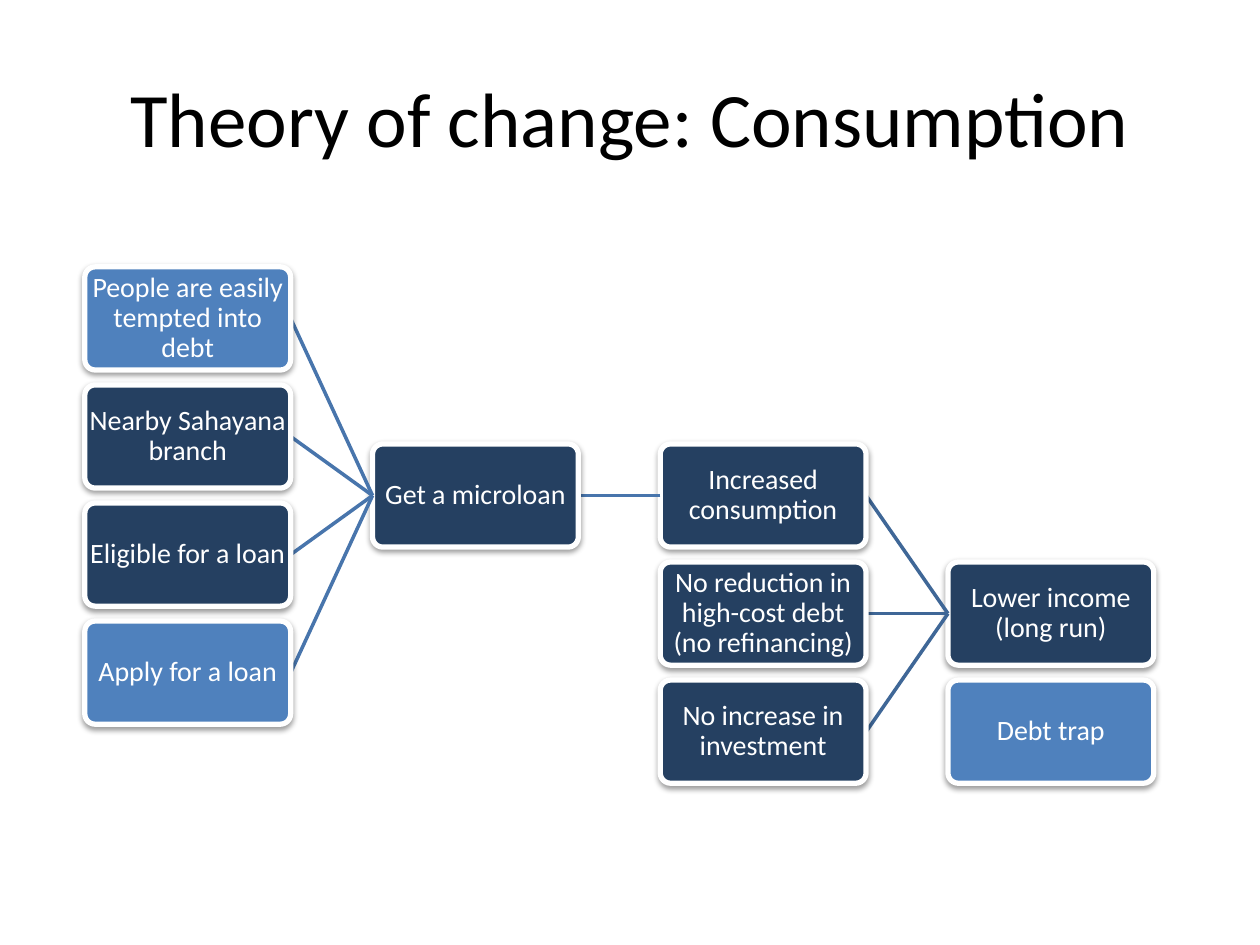
from dataclasses import dataclass

from lxml import etree
from pptx import Presentation
from pptx.dml.color import RGBColor
from pptx.enum.shapes import MSO_CONNECTOR, MSO_SHAPE
from pptx.enum.text import MSO_ANCHOR, PP_ALIGN
from pptx.oxml import parse_xml
from pptx.oxml.ns import nsdecls, qn
from pptx.util import Cm, Pt

STRAIGHT = MSO_CONNECTOR.STRAIGHT
ROUNDED = MSO_SHAPE.ROUNDED_RECTANGLE
MIDDLE = MSO_ANCHOR.MIDDLE
CENTER = PP_ALIGN.CENTER
LEFT_SITE, RIGHT_SITE = 1, 3


@dataclass(frozen=True)
class Theme:
    font: str = "Calibri"
    title_size: int = 44
    box_size: int = 16
    black: str = "000000"
    white: str = "FFFFFF"
    dark: str = "254061"
    light: str = "4F81BD"
    near_link: str = "3F6797"
    far_link: str = "4875AC"


@dataclass(frozen=True)
class Step:
    text: str
    column: int
    row: float
    color: str
    link_color: str = ""
    causes: tuple = ()


THEME = Theme()
GRID_LEFT, GRID_TOP = 1.71, 5.38
COLUMN_PITCH, ROW_PITCH = 5.8, 2.38
BOX_WIDTH, BOX_HEIGHT = 4.15, 2.08

MICROLOAN = Step("Get a microloan", 1, 1.5, THEME.dark, THEME.far_link, (
    Step("People are easily tempted into debt", 0, 0, THEME.light),
    Step("Nearby Sahayana branch", 0, 1, THEME.dark),
    Step("Eligible for a loan", 0, 2, THEME.dark),
    Step("Apply for a loan", 0, 3, THEME.light),
))
CONSUMPTION = Step("Increased consumption", 2, 1.5, THEME.dark, THEME.far_link, (MICROLOAN,))
LOWER_INCOME = Step("Lower income (long run)", 3, 2.5, THEME.dark, THEME.near_link, (
    CONSUMPTION,
    Step("No reduction in high-cost debt (no refinancing)", 2, 2.5, THEME.dark),
    Step("No increase in investment", 2, 3.5, THEME.dark),
))
DEBT_TRAP = Step("Debt trap", 3, 3.5, THEME.light)


def format_text(frame, text, size, color):
    frame.text = text
    frame.word_wrap = True
    frame.vertical_anchor = MIDDLE
    para = frame.paragraphs[0]
    para.alignment = CENTER
    font = para.runs[0].font
    font.name = THEME.font
    font.size = Pt(size)
    font.color.rgb = RGBColor.from_string(color)


def add_title(slide, text):
    title = slide.shapes.title
    title.left, title.top = Cm(1.27), Cm(0.76)
    title.width, title.height = Cm(22.86), Cm(3.18)
    format_text(title.text_frame, text, THEME.title_size, THEME.black)


def add_soft_shadow(box):
    box.shadow.inherit = False
    effects = box._element.spPr.find(qn("a:effectLst"))
    effects.append(parse_xml(
        f'<a:outerShdw {nsdecls("a")} blurRad="40000" dist="20000" dir="5400000" rotWithShape="0">'
        f'<a:srgbClr val="{THEME.black}"><a:alpha val="38000"/></a:srgbClr></a:outerShdw>'
    ))


def add_box(slide, step):
    box = slide.shapes.add_shape(
        ROUNDED,
        Cm(GRID_LEFT + step.column * COLUMN_PITCH),
        Cm(GRID_TOP + step.row * ROW_PITCH),
        Cm(BOX_WIDTH),
        Cm(BOX_HEIGHT),
    )
    box.adjustments[0] = 0.1
    box.fill.solid()
    box.fill.fore_color.rgb = RGBColor.from_string(step.color)
    box.line.color.rgb = RGBColor.from_string(THEME.white)
    box.line.width = Pt(3)
    add_soft_shadow(box)
    frame = box.text_frame
    frame.margin_left = frame.margin_right = Cm(0.03)
    frame.margin_top = frame.margin_bottom = Cm(0.03)
    format_text(frame, step.text, THEME.box_size, THEME.white)
    frame.paragraphs[0].line_spacing = 0.9
    return box


def add_link(slide, effect, color):
    link = slide.shapes.add_connector(STRAIGHT, 0, 0, 0, 0)
    link.begin_connect(effect, LEFT_SITE)
    link.line.color.rgb = RGBColor.from_string(color)
    link.line.width = Pt(2)
    etree.SubElement(link._element.spPr, qn("a:effectLst"))
    return link


def add_branch(slide, step):
    box = add_box(slide, step)
    for cause in step.causes:
        link = add_link(slide, box, step.link_color)
        link.end_connect(add_branch(slide, cause), RIGHT_SITE)
    return box


def main():
    deck = Presentation()
    deck.slide_width, deck.slide_height = Cm(25.4), Cm(19.05)
    slide = deck.slides.add_slide(deck.slide_layouts.get_by_name("Title Only"))
    add_title(slide, "Theory of change: Consumption")
    for step in (LOWER_INCOME, DEBT_TRAP):
        add_branch(slide, step)
    deck.save("out.pptx")


if __name__ == "__main__":
    main()
